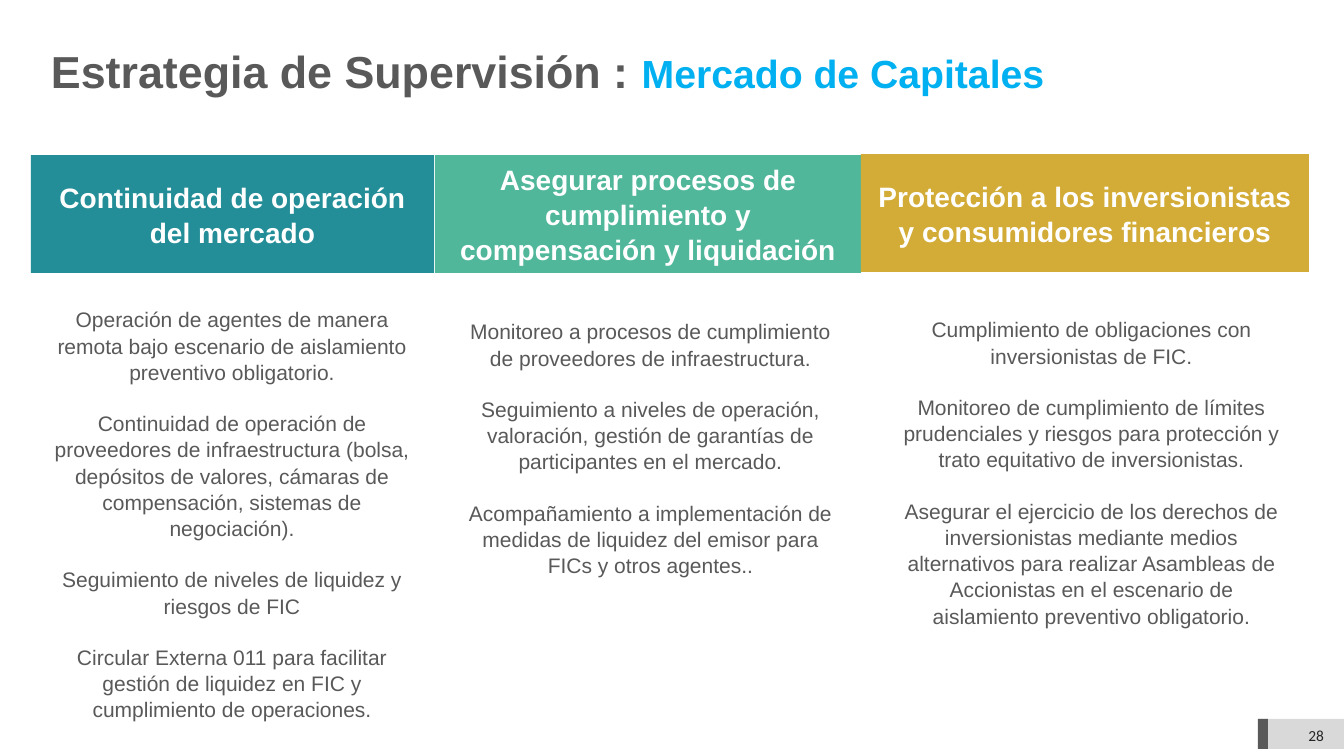
from dataclasses import dataclass

from pptx import Presentation
from pptx.dml.color import RGBColor
from pptx.enum.shapes import MSO_SHAPE
from pptx.enum.text import MSO_ANCHOR, PP_ALIGN
from pptx.util import Emu, Pt

# Content
TITLE = "Estrategia de Supervisión : "
TOPIC = "Mercado de Capitales"
PAGE_NUMBER = "28"
# heading, colour, (left, top, width) of the heading, (left, top) of the body, actions
PILLARS = [
    ("Continuidad de operación del mercado", "248E98", (31, 155, 403), (19, 286), [
        "Operación de agentes de manera remota bajo escenario de aislamiento preventivo obligatorio.",
        "Continuidad de operación de proveedores de infraestructura (bolsa, depósitos de valores, "
        "cámaras de compensación, sistemas de negociación).",
        "Seguimiento de niveles de liquidez y riesgos de FIC",
        "Circular Externa 011 para facilitar gestión de liquidez en FIC y cumplimiento de operaciones.",
    ]),
    ("Asegurar procesos de cumplimiento y compensación y liquidación", "50B79A",
     (435, 155, 426), (437, 298), [
        "Monitoreo a procesos de cumplimiento de proveedores de infraestructura.",
        "Seguimiento a niveles de operación, valoración, gestión de garantías de participantes "
        "en el mercado.",
        "Acompañamiento a implementación de medidas de liquidez del emisor para FICs y otros agentes..",
    ]),
    ("Protección a los inversionistas y consumidores financieros", "D3AC37",
     (861, 154, 448), (867, 296), [
        "Cumplimiento de obligaciones con inversionistas de FIC.",
        "Monitoreo de cumplimiento de límites prudenciales y riesgos para protección y trato "
        "equitativo de inversionistas.",
        "Asegurar el ejercicio de los derechos de inversionistas mediante medios alternativos para "
        "realizar Asambleas de Accionistas en el escenario de aislamiento preventivo obligatorio.",
    ]),
]


@dataclass(frozen=True)
class Theme:
    text: str = "595959"
    accent: str = "00B0F0"
    white: str = "FFFFFF"
    footer: str = "D9D9D9"
    number: str = "262626"
    font: str = "Arial"
    number_font: str = "Calibri"
    title_size: int = 32
    topic_size: int = 28
    heading_size: int = 20
    body_size: int = 15
    number_size: int = 11
    line_pitch: float = 1.045


THEME = Theme()
PX_PER_INCH = 100.8
SLIDE_SIZE = (1344, 756)
HEADING_HEIGHT = 118
BODY_HEIGHT = 373
BODY_INSETS = (30, 20, 30, 5)
DEFAULT_INSETS = (10, 5, 10, 5)


def px(length):
    return Emu(round(length * 914400 / PX_PER_INCH))


def add_block(slide, left, top, width, height, color):
    block = slide.shapes.add_shape(MSO_SHAPE.RECTANGLE, px(left), px(top), px(width), px(height))
    block.shadow.inherit = False
    block.fill.solid()
    block.fill.fore_color.rgb = RGBColor.from_string(color)
    block.line.fill.background()
    return block


def add_area(slide, left, top, width, height):
    return slide.shapes.add_textbox(px(left), px(top), px(width), px(height))


def set_frame(area, anchor=MSO_ANCHOR.MIDDLE, insets=DEFAULT_INSETS):
    frame = area.text_frame
    frame.word_wrap = True
    frame.vertical_anchor = anchor
    frame.margin_left, frame.margin_top, frame.margin_right, frame.margin_bottom = map(px, insets)
    return frame


def add_run(paragraph, text, size, color, bold=False, font=THEME.font):
    run = paragraph.add_run()
    run.text = text
    run.font.name, run.font.size, run.font.bold = font, Pt(size), bold
    run.font.color.rgb = RGBColor.from_string(color)


prs = Presentation()
prs.slide_width, prs.slide_height = map(px, SLIDE_SIZE)
slide = prs.slides.add_slide(prs.slide_layouts[6])

# Footer and page number
add_block(slide, 1259, 719, 85, 30, THEME.footer)
add_block(slide, 1258, 719, 10, 30, THEME.text)
number = set_frame(add_area(slide, 1263, 715, 71, 40)).paragraphs[0]
number.alignment = PP_ALIGN.RIGHT
add_run(number, PAGE_NUMBER, THEME.number_size, THEME.number, font=THEME.number_font)

# Title
title = set_frame(add_area(slide, 41, 5, 1268, 138)).paragraphs[0]
title.line_spacing = 0.9
add_run(title, TITLE, THEME.title_size, THEME.text, bold=True)
add_run(title, TOPIC, THEME.topic_size, THEME.accent, bold=True)

# Pillars: actions below, coloured heading above
for heading, color, (left, top, width), body_corner, actions in PILLARS:
    body = set_frame(add_area(slide, *body_corner, width + 1 if width > 420 else 426, BODY_HEIGHT),
                     MSO_ANCHOR.TOP, BODY_INSETS)
    for index, action in enumerate(actions):
        paragraph = body.paragraphs[0] if index == 0 else body.add_paragraph()
        paragraph.alignment = PP_ALIGN.CENTER
        paragraph.line_spacing = THEME.line_pitch
        if index:
            paragraph.space_before = Pt(18)
        add_run(paragraph, action, THEME.body_size, THEME.text)

    heading_text = set_frame(add_block(slide, left, top, width, HEADING_HEIGHT, color)).paragraphs[0]
    heading_text.alignment = PP_ALIGN.CENTER
    heading_text.line_spacing = THEME.line_pitch
    add_run(heading_text, heading, THEME.heading_size, THEME.white, bold=True)

prs.save("out.pptx")
